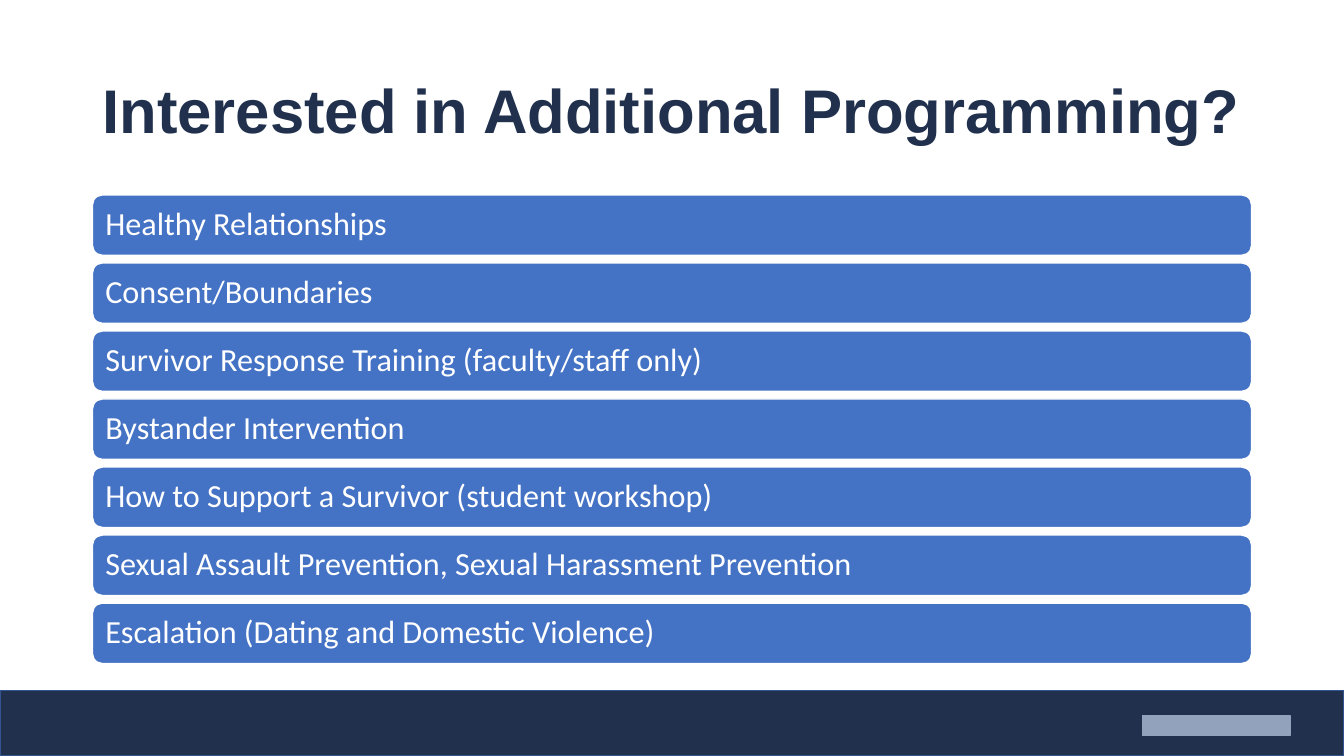
import pptx
import pptx.dml.color
import pptx.enum.shapes
import pptx.enum.text
import pptx.util

COLORS = {
    "navy": "21314D",
    "navy_edge": "325491",
    "bar": "4472C4",
    "white": "FFFFFF",
    "mist": "92A2BD",
}
COLUMNS, ROWS = 160, 90
LEFT, WIDTH = 11, 138
BAR_TOP, BAR_PITCH, BAR_HEIGHT = 23.2, 8.1, 7.2
PROGRAMS = [
    "Healthy Relationships",
    "Consent/Boundaries",
    "Survivor Response Training (faculty/staff only)",
    "Bystander Intervention",
    "How to Support a Survivor (student workshop)",
    "Sexual Assault Prevention, Sexual Harassment Prevention",
    "Escalation (Dating and Domestic Violence)",
]


def rgb(name):
    return pptx.dml.color.RGBColor.from_string(COLORS[name])


class ProgramSlide:
    def __init__(self, prs):
        self.unit_x = prs.slide_width / COLUMNS
        self.unit_y = prs.slide_height / ROWS
        self.slide = prs.slides.add_slide(prs.slide_layouts[5])

    def area(self, col, row, cols, rows):
        """Turn grid columns and rows into left, top, width and height."""
        return (round(col * self.unit_x), round(row * self.unit_y),
                round(cols * self.unit_x), round(rows * self.unit_y))

    def set_line(self, tf, text, size, font, color, bold=False):
        """Write one left-aligned, vertically centred paragraph."""
        tf.word_wrap = True
        tf.auto_size = pptx.enum.text.MSO_AUTO_SIZE.NONE
        tf.vertical_anchor = pptx.enum.text.MSO_ANCHOR.MIDDLE
        p = tf.paragraphs[0]
        p.alignment = pptx.enum.text.PP_ALIGN.LEFT
        p.line_spacing = 0.9
        r = p.add_run()
        r.text = text
        r.font.size = pptx.util.Pt(size)
        r.font.name = font
        r.font.bold = bold
        r.font.color.rgb = rgb(color)

    def title(self, text, *grid):
        sp = self.slide.shapes.title
        sp.left, sp.top, sp.width, sp.height = self.area(*grid)
        self.set_line(sp.text_frame, text, 44, "Arial", "navy", bold=True)

    def block(self, kind, fill, line, *grid):
        sp = self.slide.shapes.add_shape(kind, *self.area(*grid))
        sp.shadow.inherit = False
        sp.fill.solid()
        sp.fill.fore_color.rgb = rgb(fill)
        sp.line.color.rgb = rgb(line)
        sp.line.width = pptx.util.Pt(1)
        return sp

    def bar(self, text, *grid):
        sp = self.block(pptx.enum.shapes.MSO_SHAPE.ROUNDED_RECTANGLE,
                        "bar", "white", *grid)
        tf = sp.text_frame
        tf.margin_left = tf.margin_right = pptx.util.Inches(0.1)
        self.set_line(tf, text, 23, "Calibri", "white")

    def panel(self, fill, line, *grid):
        self.block(pptx.enum.shapes.MSO_SHAPE.RECTANGLE, fill, line, *grid)


def main():
    prs = pptx.Presentation()
    prs.slide_width = pptx.util.Inches(13.33)
    prs.slide_height = pptx.util.Inches(7.5)

    s = ProgramSlide(prs)
    s.panel("navy", "navy_edge", 0, 82.2, COLUMNS, 7.8)
    s.panel("mist", "mist", 136, 85.2, 17.6, 2.4)
    s.title("Interested in Additional Programming?", LEFT, 4.8, WIDTH, 17.4)
    for i, program in enumerate(PROGRAMS):
        s.bar(program, LEFT, BAR_TOP + i * BAR_PITCH, WIDTH, BAR_HEIGHT)

    prs.save("out.pptx")


if __name__ == "__main__":
    main()
